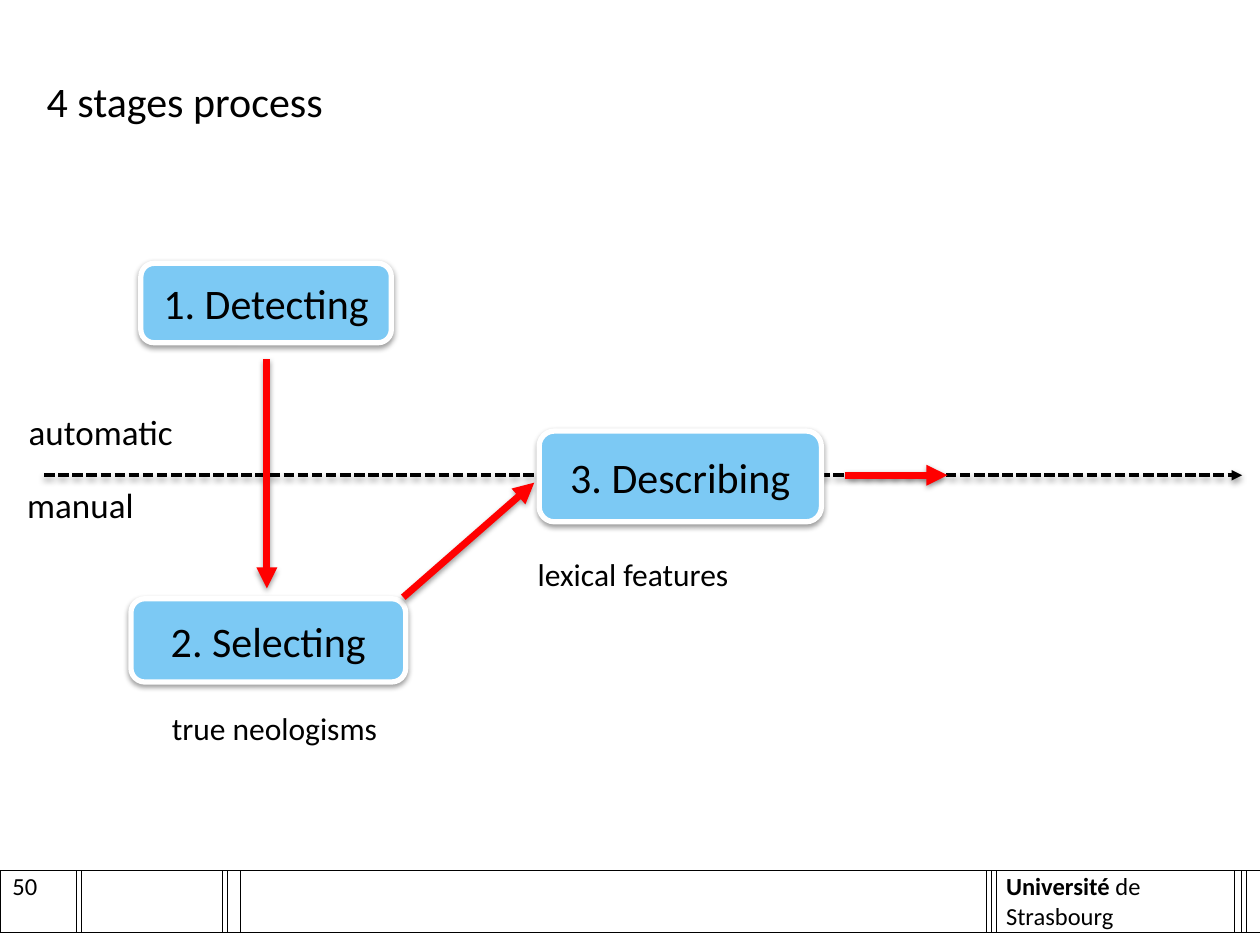
"""Build the slide showing the stages of neologism processing."""
from dataclasses import dataclass

from lxml import etree
from pptx import Presentation
from pptx.dml.color import RGBColor
from pptx.enum.dml import MSO_LINE
from pptx.enum.shapes import MSO_CONNECTOR, MSO_SHAPE
from pptx.enum.text import MSO_ANCHOR, PP_ALIGN
from pptx.oxml import parse_xml
from pptx.oxml.ns import nsdecls, qn
from pptx.util import Cm, Pt

LEFT, CENTER = PP_ALIGN.LEFT, PP_ALIGN.CENTER
TOP, MIDDLE = MSO_ANCHOR.TOP, MSO_ANCHOR.MIDDLE
STRAIGHT, ROUNDED, DASH = MSO_CONNECTOR.STRAIGHT, MSO_SHAPE.ROUNDED_RECTANGLE, MSO_LINE.SQUARE_DOT
FONT = "Calibri"
COLORS = {"black": "000000", "white": "FFFFFF", "red": "FF0000", "blue": "7CC9F4"}
NO_STYLE = "{2D5ABB26-0587-4C30-8999-92F81FD0307C}"
FOOTER_COLS = (1.55, 0.1, 2.84, 0.08, 0.25, 15.04, 0.1, 0.1, 4.8, 0.15, 0.1, 0.29)
FOOTER_ROWS = (0.74, 1.24, 0.69)
ROW_BORDERS = (("lnB",), ("lnL", "lnR", "lnT", "lnB"), ("lnT",))
AXIS_Y = 9.58


@dataclass
class Label:
    text: str
    left: float
    top: float
    width: float
    height: float
    size: int
    align: PP_ALIGN = LEFT
    anchor: MSO_ANCHOR = TOP


@dataclass
class Stage:
    text: str
    left: float
    top: float
    width: float
    height: float


@dataclass
class Arrow:
    x1: float
    y1: float
    x2: float
    y2: float
    color: str = "red"
    weight: int = 4
    dashed: bool = False


LABELS = (
    Label("50", 0, 17.48, 1.55, 0.76, 14, anchor=MIDDLE),
    Label("4 stages process", 0.69, 1.4, 20.47, 1.8, 24),
    Label("automatic", 0.33, 8.15, 6.73, 1.12, 20),
    Label("manual", 0.3, 9.63, 3.2, 1.12, 20),
    Label("true neologisms", 2.54, 14.17, 5.99, 1.02, 18, CENTER),
    Label("lexical features", 10.59, 11.07, 5.99, 1.02, 18),
)
STAGES = (
    Stage("1. Detecting", 2.84, 5.31, 5.05, 1.6),
    Stage("2. Selecting", 2.64, 12.07, 5.54, 1.68),
    Stage("3. Describing", 10.87, 8.69, 5.69, 1.83),
)
AXIS = Arrow(0.89, AXIS_Y, 25.04, AXIS_Y, "black", 2, True)
ARROWS = (
    Arrow(5.38, 7.24, 5.38, 11.86),
    Arrow(8.13, 12.04, 10.77, 9.73),
    Arrow(17.04, AXIS_Y, 19.1, AXIS_Y),
)


def rgb(name: str) -> RGBColor:
    return RGBColor.from_string(COLORS[name])


def style(p, size: int, align: PP_ALIGN = LEFT) -> None:
    p.alignment = align
    p.font.name = FONT
    p.font.size = Pt(size)
    p.font.color.rgb = rgb("black")


def add_shadow(sp_pr) -> None:
    for old in sp_pr.findall(qn("a:effectLst")):
        sp_pr.remove(old)
    sp_pr.append(parse_xml(
        f'<a:effectLst {nsdecls("a")}><a:outerShdw blurRad="40000" dist="20000" dir="5400000" '
        f'rotWithShape="0"><a:srgbClr val="{COLORS["black"]}"><a:alpha val="38000"/></a:srgbClr>'
        '</a:outerShdw></a:effectLst>'))


def add_label(slide, label: Label) -> None:
    sp = slide.shapes.add_textbox(Cm(label.left), Cm(label.top), Cm(label.width), Cm(label.height))
    tf = sp.text_frame
    tf.word_wrap = True
    tf.vertical_anchor = label.anchor
    tf.text = label.text
    style(tf.paragraphs[0], label.size, label.align)


def add_stage(slide, stage: Stage) -> None:
    sp = slide.shapes.add_shape(ROUNDED, Cm(stage.left), Cm(stage.top), Cm(stage.width), Cm(stage.height))
    sp.fill.solid()
    sp.fill.fore_color.rgb = rgb("blue")
    sp.line.color.rgb = rgb("white")
    sp.line.width = Pt(3)
    sp.shadow.inherit = False
    add_shadow(sp.element.spPr)
    tf = sp.text_frame
    tf.vertical_anchor = MIDDLE
    tf.text = stage.text
    style(tf.paragraphs[0], 24, CENTER)


def add_arrow(slide, arrow: Arrow) -> None:
    cxn = slide.shapes.add_connector(STRAIGHT, Cm(arrow.x1), Cm(arrow.y1), Cm(arrow.x2), Cm(arrow.y2))
    cxn.line.color.rgb = rgb(arrow.color)
    cxn.line.width = Pt(arrow.weight)
    if arrow.dashed:
        cxn.line.dash_style = DASH
    sp_pr = cxn.element.spPr
    etree.SubElement(sp_pr.find(qn("a:ln")), qn("a:tailEnd"), type="triangle")
    add_shadow(sp_pr)


def format_cell(cell, borders: tuple[str, ...]) -> None:
    cell.margin_left = cell.margin_right = cell.margin_top = cell.margin_bottom = 0
    tc_pr = cell._tc.get_or_add_tcPr()
    for side in borders:
        tc_pr.append(parse_xml(
            f'<a:{side} {nsdecls("a")} w="6350"><a:solidFill><a:srgbClr val="{COLORS["black"]}"/>'
            f'</a:solidFill></a:{side}>'))
    cell.fill.solid()
    cell.fill.fore_color.rgb = rgb("white")
    style(cell.text_frame.paragraphs[0], 14)


def add_footer(slide) -> None:
    frame = slide.shapes.add_table(len(FOOTER_ROWS), len(FOOTER_COLS), 0, Cm(16.81),
                                   Cm(sum(FOOTER_COLS)), Cm(sum(FOOTER_ROWS)))
    table = frame.table
    table.first_row = table.horz_banding = False
    table._tbl.tblPr.find(qn("a:tableStyleId")).text = NO_STYLE
    for col, width in zip(table.columns, FOOTER_COLS):
        col.width = Cm(width)
    for row, height, borders in zip(table.rows, FOOTER_ROWS, ROW_BORDERS):
        row.height = Cm(height)
        for cell in row.cells:
            format_cell(cell, borders)
    last = len(FOOTER_COLS) - 1
    for i in (0, 2):
        table.cell(i, 0).merge(table.cell(i, last))
    cell = table.cell(1, 8)
    cell.margin_left, cell.margin_top = Cm(0.2), Cm(0.03)
    p = cell.text_frame.paragraphs[0]
    for text, bold in (("Université", True), (" de Strasbourg", False)):
        r = p.add_run()
        r.text = text
        r.font.bold = bold


def main() -> None:
    prs = Presentation()
    prs.slide_width, prs.slide_height = Cm(25.4), Cm(19.05)
    slide = prs.slides.add_slide(prs.slide_layouts[6])
    add_footer(slide)
    add_arrow(slide, AXIS)
    for label in LABELS:
        add_label(slide, label)
    for stage in STAGES:
        add_stage(slide, stage)
    for arrow in ARROWS:
        add_arrow(slide, arrow)
    prs.save("out.pptx")


if __name__ == "__main__":
    main()
